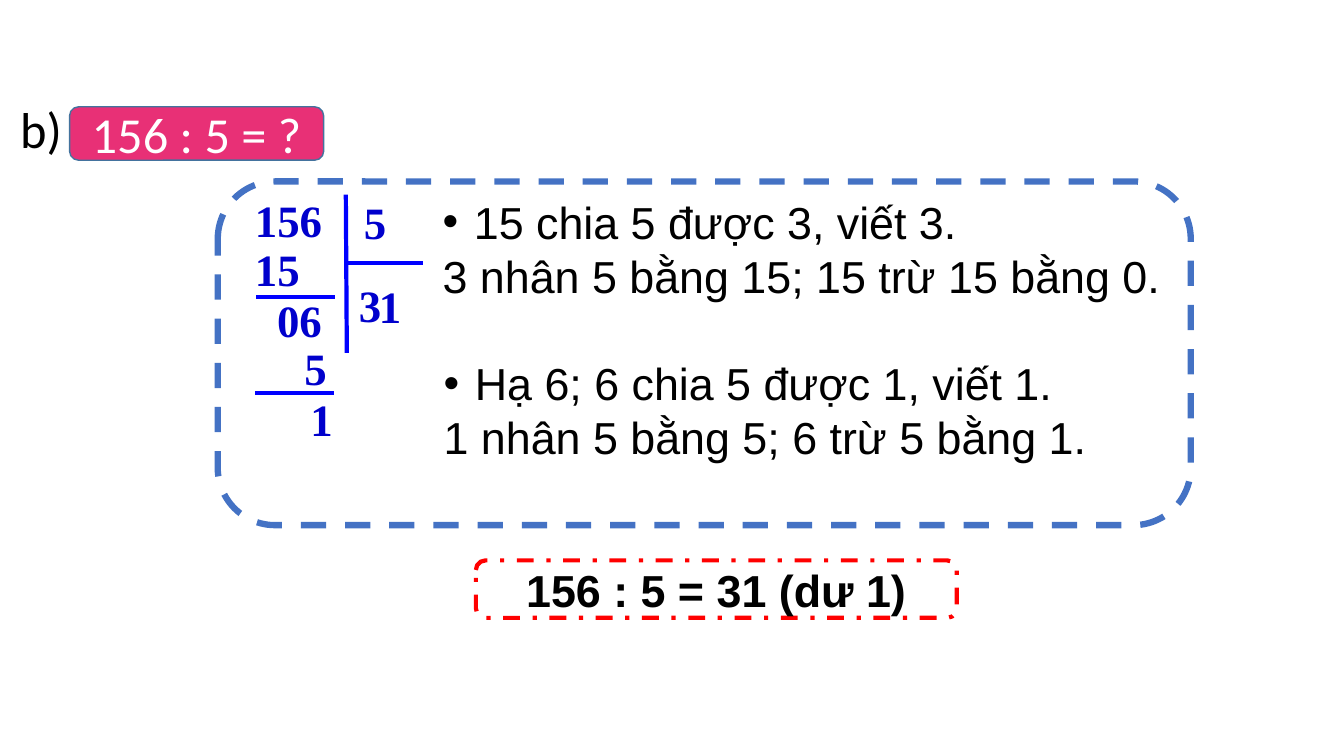
import pptx
import pptx.util
import pptx.dml.color
import pptx.enum.dml
import pptx.enum.shapes
import pptx.enum.text
import pptx.oxml.ns
from lxml import etree

PX = 9144
BLACK = "000000"
RULE_BLUE = "0000FF"
DIGIT_BLUE = "0000CC"
WHITE = "FFFFFF"
DASH = pptx.enum.dml.MSO_LINE
ALIGN = pptx.enum.text.PP_ALIGN
ANCHOR = pptx.enum.text.MSO_ANCHOR

DIGITS = [
    ("156", 243, 186, 96),
    ("5", 351, 188, 42),
    ("15", 243, 235, 69),
    ("3", 346, 271, 42),
    ("1", 366, 272, 42),
    ("0", 265, 286, 31),
    ("6", 287, 286, 31),
    ("5", 292, 333, 65),
    ("1", 298, 384, 31),
]

RULES = [
    (254, 295, 332, 295),
    (342, 261, 420, 261),
    (343, 193, 344, 350),
    (253, 390, 331, 390),
]


def px(*lengths):
    return [pptx.util.Emu(length * PX) for length in lengths]


def colour(value):
    return pptx.dml.color.RGBColor.from_string(value)


def style(para, font, size, value, bold=False):
    para.font.name = font
    para.font.size = pptx.util.Pt(size)
    para.font.color.rgb = colour(value)
    para.font.bold = bold


def place(shape, left, top, width, height):
    shape.left, shape.top, shape.width, shape.height = px(left, top, width, height)


def set_bullet(para, bulleted):
    properties = para._p.get_or_add_pPr()
    indent = 31 * PX if bulleted else 0
    properties.set("marL", str(indent))
    properties.set("indent", str(-indent))
    tag = "a:buChar" if bulleted else "a:buNone"
    bullet = etree.SubElement(properties, pptx.oxml.ns.qn(tag))
    if bulleted:
        bullet.set("char", "•")


def fill_title(title, text):
    place(title, 10, 92, 101, 71)
    frame = title.text_frame
    frame.text = text
    frame.vertical_anchor = ANCHOR.TOP
    frame.auto_size = pptx.enum.text.MSO_AUTO_SIZE.NONE
    frame.paragraphs[0].alignment = ALIGN.LEFT
    style(frame.paragraphs[0], "Calibri", 36, BLACK)


def fill_step(body, box, lines):
    place(body, *box)
    frame = body.text_frame
    frame.text = "\n".join(lines)
    frame.auto_size = pptx.enum.text.MSO_AUTO_SIZE.NONE
    frame.margin_left = frame.margin_right = 0
    frame.margin_top = frame.margin_bottom = 0
    for index, para in enumerate(frame.paragraphs):
        para.space_before = pptx.util.Pt(0)
        set_bullet(para, index == 0)
        style(para, "Arial", 32, BLACK)


def add_panel(page, box, line, weight, dash=None, fill=None):
    kind = pptx.enum.shapes.MSO_SHAPE.ROUNDED_RECTANGLE
    panel = page.shapes.add_shape(kind, *px(*box))
    panel.shadow.inherit = False
    if fill:
        panel.fill.solid()
        panel.fill.fore_color.rgb = colour(fill)
    else:
        panel.fill.background()
    panel.line.color.rgb = colour(line)
    panel.line.width = pptx.util.Pt(weight)
    if dash:
        panel.line.dash_style = dash
    return panel


def label_panel(panel, text, font, size, value, bold=False):
    frame = panel.text_frame
    frame.text = text
    frame.vertical_anchor = ANCHOR.MIDDLE
    frame.paragraphs[0].alignment = ALIGN.CENTER
    style(frame.paragraphs[0], font, size, value, bold)


def add_digits(page, text, left, top, width):
    box = page.shapes.add_textbox(*px(left, top, width, 64))
    box.text_frame.word_wrap = True
    box.text_frame.text = text
    style(box.text_frame.paragraphs[0], "Times New Roman", 32, DIGIT_BLUE, True)


def add_rule(page, ends):
    kind = pptx.enum.shapes.MSO_CONNECTOR.STRAIGHT
    rule = page.shapes.add_connector(kind, *px(*ends))
    rule.line.color.rgb = colour(RULE_BLUE)
    rule.line.width = pptx.util.Pt(3)
    etree.SubElement(rule._element.spPr, pptx.oxml.ns.qn("a:effectLst"))


def main():
    deck = pptx.Presentation()
    deck.slide_width, deck.slide_height = px(1333, 750)
    page = deck.slides.add_slide(deck.slide_layouts[3])

    fill_title(page.shapes.title, "b)")
    fill_step(page.placeholders[1], (439, 193, 721, 108),
              ["15 chia 5 được 3, viết 3.", "3 nhân 5 bằng 15; 15 trừ 15 bằng 0."])
    fill_step(page.placeholders[2], (440, 353, 654, 108),
              ["Hạ 6; 6 chia 5 được 1, viết 1.", "1 nhân 5 bằng 5; 6 trừ 5 bằng 1."])

    add_panel(page, (216, 180, 965, 341), "4472C4", 4.5, DASH.DASH)
    for ends in RULES:
        add_rule(page, ends)
    for digits in DIGITS:
        add_digits(page, *digits)

    answer = add_panel(page, (472, 556, 477, 57), "FF0000", 3, DASH.DASH_DOT, WHITE)
    label_panel(answer, "156 : 5 = 31 (dư 1)", "Arial", 32, BLACK, True)
    question = add_panel(page, (69, 106, 252, 53), "43739E", 1, fill="E83076")
    label_panel(question, "156 : 5 = ?", "Calibri", 36, WHITE)

    deck.save("out.pptx")


if __name__ == "__main__":
    main()
